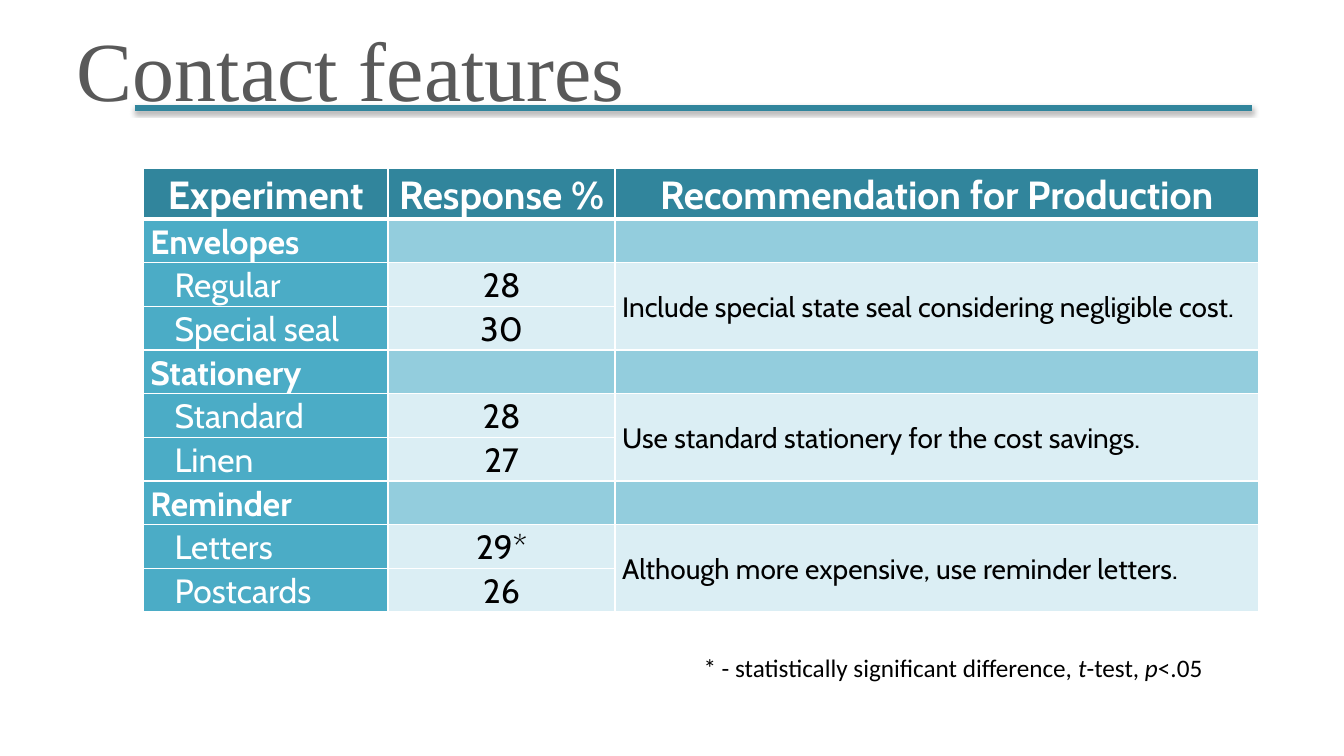
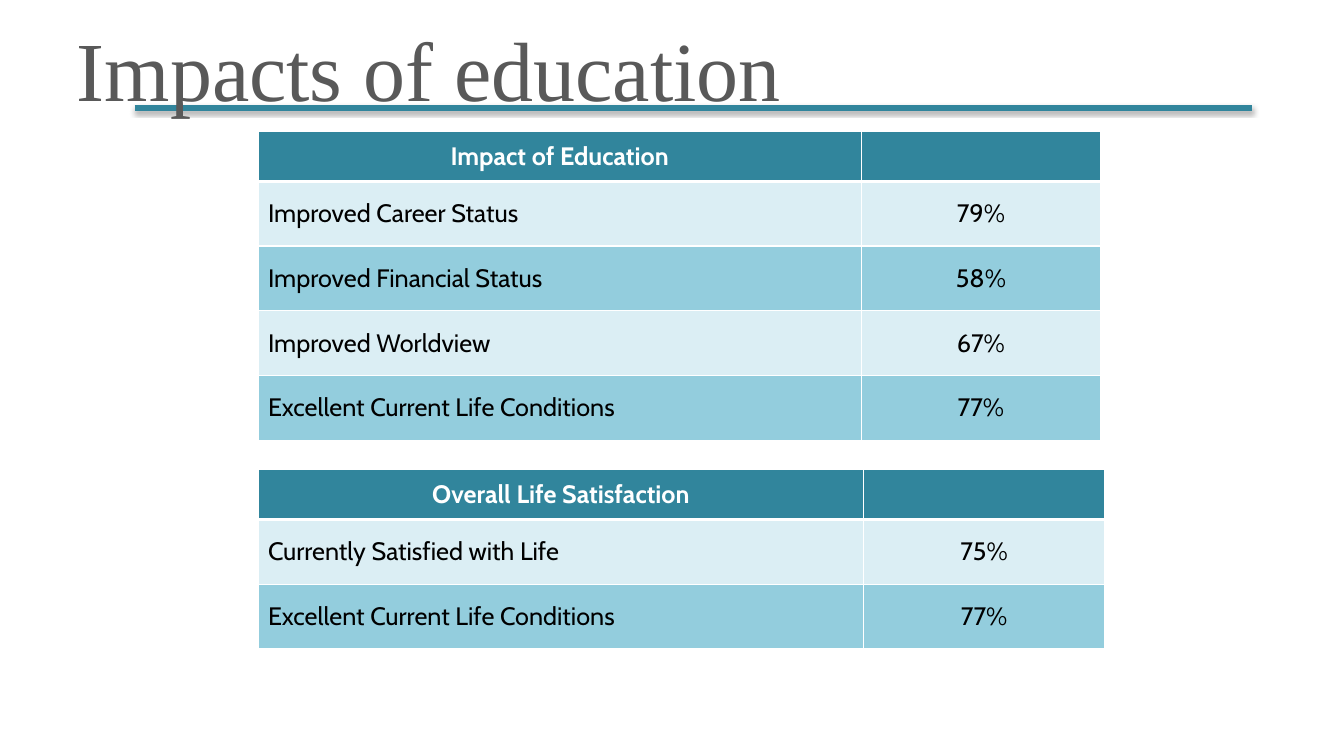
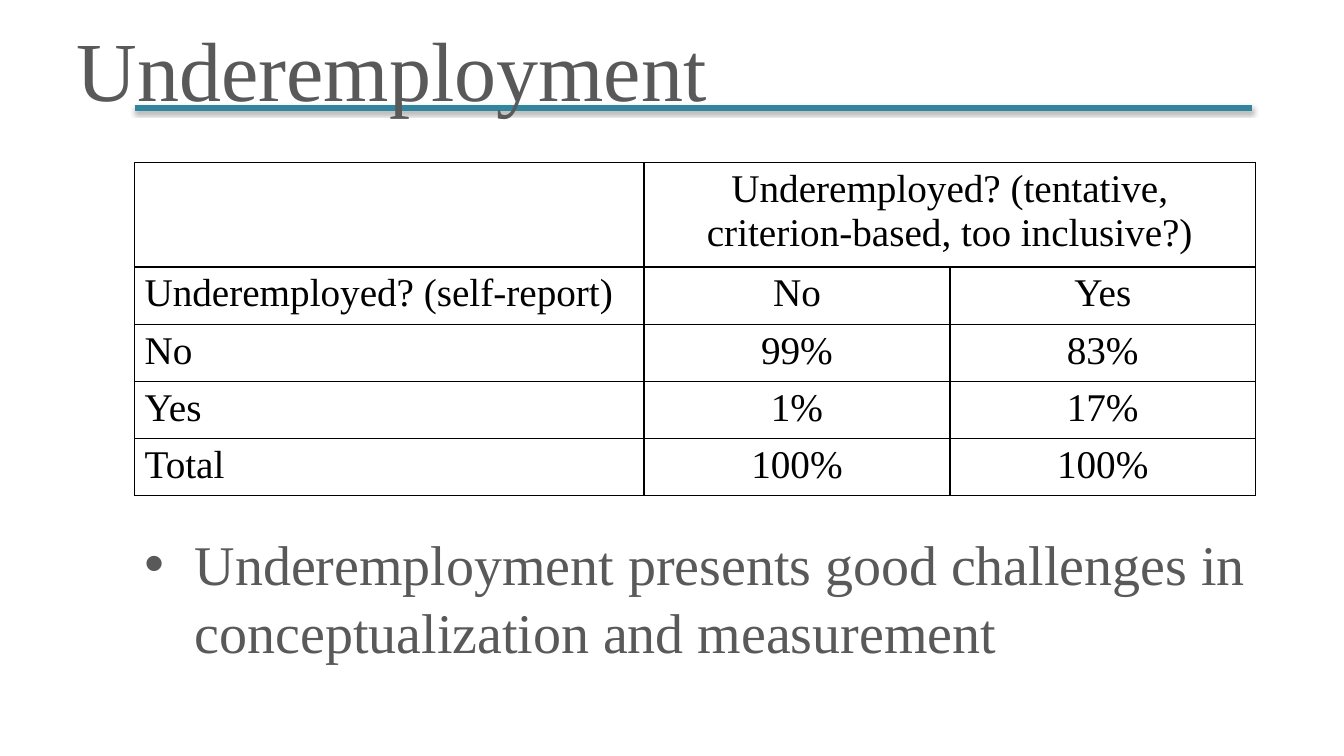
import pptx
import pptx.util
import pptx.dml.color
import pptx.enum.shapes
import pptx.enum.text
import pptx.oxml
import pptx.oxml.ns

Cm = pptx.util.Cm
Pt = pptx.util.Pt
RGB = pptx.dml.color.RGBColor.from_string
ALIGN = pptx.enum.text.PP_ALIGN
MIDDLE = pptx.enum.text.MSO_ANCHOR.MIDDLE
NS = pptx.oxml.ns.nsdecls("a")

C = {"teal": "31859C", "aqua": "4BACC6", "sky": "93CDDD", "ice": "DBEEF4",
     "gray": "595959", "black": "000000", "white": "FFFFFF"}
SERIF = {"name": "Times New Roman"}
CABIN = {"name": "Cabin"}


def put(p, text, color, fmt):
    r = p.add_run()
    r.text = text
    r.font.color.rgb = RGB(C[color])
    for key, value in fmt.items():
        setattr(r.font, key, value)


def add_grid(s, left, top, cols, rows, line, head_rule, margins):
    gf = s.shapes.add_table(len(rows), len(cols), Cm(left), Cm(top), Cm(sum(cols)), Cm(sum(rows)))
    tbl = gf.table
    tbl.first_row = tbl.horz_banding = False
    for col, w in zip(tbl.columns, cols):
        col.width = Cm(w)
    for i, (row, h) in enumerate(zip(tbl.rows, rows)):
        row.height = Cm(h)
        for cell in row.cells:
            for key, value in margins.items():
                setattr(cell, key, value)
            tcPr = cell._tc.get_or_add_tcPr()
            for side in "LRTB":
                pt = head_rule if (i, side) in ((0, "B"), (1, "T")) else 1
                tcPr.append(pptx.oxml.parse_xml(
                    f'<a:ln{side} {NS} w="{Pt(pt)}"><a:solidFill><a:srgbClr val="{C[line]}"/>'
                    f'</a:solidFill></a:ln{side}>'))
    return tbl


prs = pptx.Presentation()
prs.slide_width, prs.slide_height = Cm(33.87), Cm(19.05)

slides = []
for title in ("Contact features", "Impacts of education", "Underemployment"):
    s = prs.slides.add_slide(prs.slide_layouts[6])
    rule = s.shapes.add_connector(pptx.enum.shapes.MSO_CONNECTOR.STRAIGHT,
                                  Cm(3.39), Cm(2.72), Cm(31.55), Cm(2.72))
    rule.line.color.rgb = RGB(C["teal"])
    rule.line.width = Pt(4.5)
    rule._element.spPr.append(pptx.oxml.parse_xml(
        f'<a:effectLst {NS}><a:outerShdw blurRad="{Pt(3.1)}" dist="{Pt(1.6)}" dir="5400000" '
        f'rotWithShape="0"><a:srgbClr val="{C["black"]}"><a:alpha val="38000"/></a:srgbClr>'
        f'</a:outerShdw></a:effectLst>'))
    tf = s.shapes.add_textbox(Cm(1.69), Cm(0.13), Cm(30.48), Cm(3.18)).text_frame
    tf.word_wrap = True
    tf.vertical_anchor = MIDDLE
    put(tf.paragraphs[0], title, "gray", {**SERIF, "size": Pt(60)})
    slides.append(s)
contact, impacts, underemployment = slides

experiments = [
    ("Envelopes", ("Regular", "28"), ("Special seal", "30"),
     "Include special state seal considering negligible cost."),
    ("Stationery", ("Standard", "28"), ("Linen", "27"),
     "Use standard stationery for the cost savings."),
    ("Reminder", ("Letters", "29*"), ("Postcards", "26"),
     "Although more expensive, use reminder letters."),
]
rows = [("Experiment", "Response %", "Recommendation for Production")]
for group, first, second, advice in experiments:
    rows += [(group, "", ""), (*first, advice), (*second, "")]
tight = {"margin_left": Cm(0.18), "margin_right": Cm(0.18), "margin_top": 0, "margin_bottom": 0,
         "vertical_anchor": MIDDLE}
tbl = add_grid(contact, 3.61, 4.24, [6.17, 5.72, 16.21], [1.28] + [1.1] * 9, "white", 3, tight)
for i, row in enumerate(rows):
    is_head, is_group = i == 0, i % 3 == 1
    for j, text in enumerate(row):
        cell = tbl.cell(i, j)
        fill = "teal" if is_head else "aqua" if j == 0 else "sky" if is_group else "ice"
        cell.fill.solid()
        cell.fill.fore_color.rgb = RGB(C[fill])
        if not text:
            continue
        p = cell.text_frame.paragraphs[0]
        p.line_spacing = 1.07
        p.alignment = ALIGN.CENTER if is_head or j == 1 else ALIGN.LEFT
        if j == 0 and not is_head and not is_group:
            p._p.get_or_add_pPr().set("marL", str(Cm(0.61)))
        size = 28 if is_head else 20 if j == 2 else 24
        put(p, text, "white" if is_head or j == 0 else "black",
            {**CABIN, "size": Pt(size), "bold": is_head or is_group})
for i in range(2, len(rows), 3):
    tbl.cell(i, 2).merge(tbl.cell(i + 1, 2))

tf = contact.shapes.add_textbox(Cm(17.48), Cm(16.31), Cm(14.27), Cm(1.02)).text_frame
tf.word_wrap = True
for i, text in enumerate(("* - statistically significant difference, ", "t", "-test, ", "p", "<.05")):
    put(tf.paragraphs[0], text, "black", {"name": "Calibri", "size": Pt(18), "italic": i % 2 == 1})

outcomes = [
    (3.3, [15.21, 6.02], [("Impact of Education", ""), ("Improved Career Status", "79%"),
                          ("Improved Financial Status", "58%"), ("Improved Worldview", "67%"),
                          ("Excellent Current Life Conditions", "77%")]),
    (11.82, [15.27, 6.06], [("Overall Life Satisfaction", ""), ("Currently Satisfied with Life", "75%"),
                            ("Excellent Current Life Conditions", "77%")]),
]
for top, cols, rows in outcomes:
    heights = [1.27] + [1.63] * (len(rows) - 1)
    tbl = add_grid(impacts, 6.5, top, cols, heights, "white", 3, {"vertical_anchor": MIDDLE})
    for i, row in enumerate(rows):
        for j, text in enumerate(row):
            cell = tbl.cell(i, j)
            cell.fill.solid()
            cell.fill.fore_color.rgb = RGB(C["teal" if i == 0 else "ice" if i % 2 else "sky"])
            if text:
                p = cell.text_frame.paragraphs[0]
                p.alignment = ALIGN.CENTER if i == 0 or j == 1 else ALIGN.LEFT
                put(p, text, "black" if i else "white", {**CABIN, "size": Pt(18), "bold": i == 0})

rows = [
    ("", "Underemployed? (tentative, criterion-based, too inclusive?)", ""),
    ("Underemployed? (self-report)", "No", "Yes"),
    ("No", "99%", "83%"),
    ("Yes", "1%", "17%"),
    ("Total", "100%", "100%"),
]
tbl = add_grid(underemployment, 3.39, 4.1, [12.84, 7.71, 7.7], [2.46] + [1.35] * 4, "black", 1, {})
for i, row in enumerate(rows):
    for j, text in enumerate(row):
        cell = tbl.cell(i, j)
        cell.fill.background()
        if text:
            p = cell.text_frame.paragraphs[0]
            p.alignment = ALIGN.CENTER if j else ALIGN.LEFT
            put(p, text, "black", {**SERIF, "size": Pt(28)})
tbl.cell(0, 1).merge(tbl.cell(0, 2))

tf = underemployment.shapes.add_textbox(Cm(3.39), Cm(13.23), Cm(29.08), Cm(4.39)).text_frame
tf.word_wrap = True
p = tf.paragraphs[0]
pPr = p._p.get_or_add_pPr()
for key, value in {"marL": Cm(1.27), "indent": Cm(-1.27)}.items():
    pPr.set(key, str(value))
pPr.append(pptx.oxml.parse_xml(f'<a:buFont {NS} typeface="Arial"/>'))
pPr.append(pptx.oxml.parse_xml(f'<a:buChar {NS} char="•"/>'))
put(p, "Underemployment presents good challenges in conceptualization and measurement", "gray",
    {**SERIF, "size": Pt(40)})

prs.save("out.pptx")
